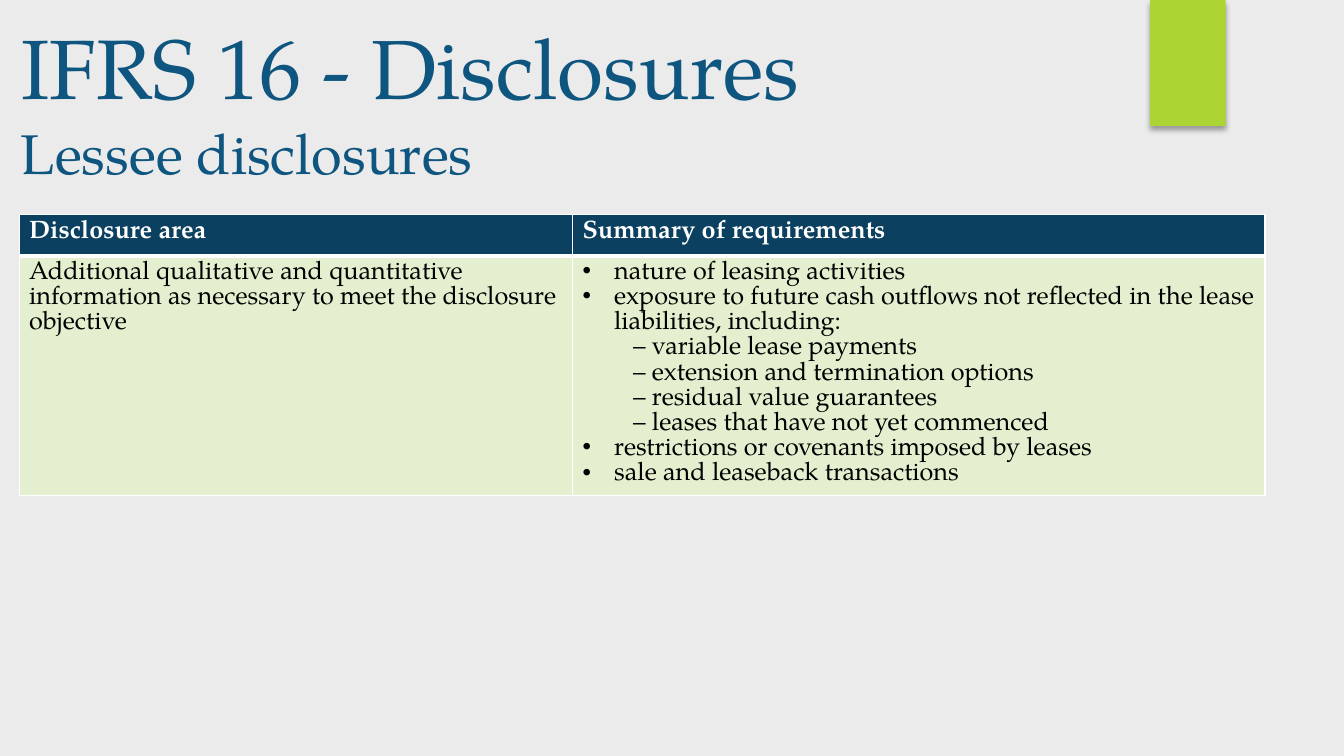
from lxml.etree import SubElement
from pptx import Presentation
from pptx.dml.color import RGBColor
from pptx.enum.shapes import MSO_SHAPE
from pptx.enum.text import MSO_ANCHOR, MSO_AUTO_SIZE, PP_ALIGN
from pptx.oxml.ns import qn
from pptx.util import Pt

FONT = "TeX Gyre Pagella"
TITLE = ("IFRS 16 - Disclosures", 60, (7.9, 7.9, 768.2, 78.5))
SUBTITLE = ("Lessee disclosures", 40, (7.9, 79.2, 360, 59))
ACCENT_BOX = (821.5, 0, 54, 90)
TABLE_ORIGIN = (13.7, 153.4)
COLUMN_WIDTHS = (395.3, 494.6)
ROW_HEIGHTS = (29.5, 171)
TABLE_ROWS = [
    [[("plain", "Disclosure area")], [("plain", "Summary of requirements")]],
    [
        [("plain", "Additional qualitative and quantitative information as necessary "
                   "to meet the disclosure objective")],
        [
            ("bullet", "nature of leasing activities"),
            ("bullet", "exposure to future cash outflows not reflected in the lease "
                       "liabilities, including:"),
            ("dash", "– variable lease payments"),
            ("dash", "– extension and termination options"),
            ("dash", "– residual value guarantees"),
            ("dash", "– leases that have not yet commenced"),
            ("bullet", "restrictions or covenants imposed by leases"),
            ("bullet", "sale and leaseback transactions"),
        ],
    ],
]
ROW_STYLES = [
    {"fill": "0B4060", "text": "FFFFFF", "bold": True, "borders": {"L": 1, "R": 1, "T": 1, "B": 3}},
    {"fill": "E3EFCE", "text": "000000", "bold": False, "borders": {"L": 1, "R": 1, "T": 3, "B": 1}},
]
INDENTS = {"plain": (0, 0), "bullet": (22.5, -22.5), "dash": (36, 0)}


def color(value):
    return RGBColor.from_string(value)


def points(values):
    return [Pt(value) for value in values]


def format_font(font, size, text_color, bold=False):
    for name, value in {"name": FONT, "size": Pt(size), "bold": bold}.items():
        setattr(font, name, value)
    font.color.rgb = color(text_color)


def write_heading(shape, text, size, box):
    for name, value in zip(("left", "top", "width", "height"), points(box)):
        setattr(shape, name, value)
    frame = shape.text_frame
    settings = {"auto_size": MSO_AUTO_SIZE.NONE, "word_wrap": True,
                "vertical_anchor": MSO_ANCHOR.MIDDLE}
    for name, value in settings.items():
        setattr(frame, name, value)
    paragraph = frame.paragraphs[0]
    paragraph.text = text
    paragraph.alignment = PP_ALIGN.LEFT
    format_font(paragraph.runs[0].font, size, "0E5580")


def add_solid_color(parent, value):
    fill = SubElement(parent, qn("a:solidFill"))
    return SubElement(fill, qn("a:srgbClr"), val=value)


def add_accent(slide):
    shape = slide.shapes.add_shape(MSO_SHAPE.RECTANGLE, *points(ACCENT_BOX))
    shape.fill.solid()
    shape.fill.fore_color.rgb = color("ACD433")
    shape.line.fill.background()
    shape.shadow.inherit = False
    effects = shape.element.spPr.find(qn("a:effectLst"))
    shadow = SubElement(effects, qn("a:outerShdw"), blurRad=str(Pt(4)), dist=str(Pt(3)),
                        dir="5400000", rotWithShape="0")
    shadow_color = SubElement(shadow, qn("a:srgbClr"), val="000000")
    SubElement(shadow_color, qn("a:alpha"), val="35000")


def write_cell(cell, lines, style):
    properties = cell._tc.get_or_add_tcPr()
    for side, width in style["borders"].items():
        border = SubElement(properties, qn(f"a:ln{side}"), w=str(Pt(width)))
        add_solid_color(border, "FFFFFF")
    cell.fill.solid()
    cell.fill.fore_color.rgb = color(style["fill"])
    frame = cell.text_frame
    for index, (kind, text) in enumerate(lines):
        paragraph = frame.add_paragraph() if index else frame.paragraphs[0]
        paragraph.text = text
        paragraph.line_spacing = Pt(18)
        paragraph_properties = paragraph._p.get_or_add_pPr()
        for name, value in zip(("marL", "indent"), points(INDENTS[kind])):
            paragraph_properties.set(name, str(value))
        if kind == "bullet":
            SubElement(paragraph_properties, qn("a:buChar"), char="•")
        format_font(paragraph.runs[0].font, 18, style["text"], style["bold"])


def add_disclosure_table(slide):
    size = (sum(COLUMN_WIDTHS), sum(ROW_HEIGHTS))
    table = slide.shapes.add_table(len(ROW_HEIGHTS), len(COLUMN_WIDTHS),
                                   *points(TABLE_ORIGIN + size)).table
    for column, width in zip(table.columns, COLUMN_WIDTHS):
        column.width = Pt(width)
    for row, height, contents, style in zip(table.rows, ROW_HEIGHTS, TABLE_ROWS, ROW_STYLES):
        row.height = Pt(height)
        for cell, lines in zip(row.cells, contents):
            write_cell(cell, lines, style)


def main():
    presentation = Presentation()
    presentation.slide_width, presentation.slide_height = points((960, 540))
    slide = presentation.slides.add_slide(presentation.slide_layouts[5])
    slide.background.fill.solid()
    slide.background.fill.fore_color.rgb = color("EBEBEB")
    add_accent(slide)
    write_heading(slide.shapes.title, *TITLE)
    write_heading(slide.shapes.add_textbox(*points(SUBTITLE[2])), *SUBTITLE)
    add_disclosure_table(slide)
    presentation.save("out.pptx")


if __name__ == "__main__":
    main()
